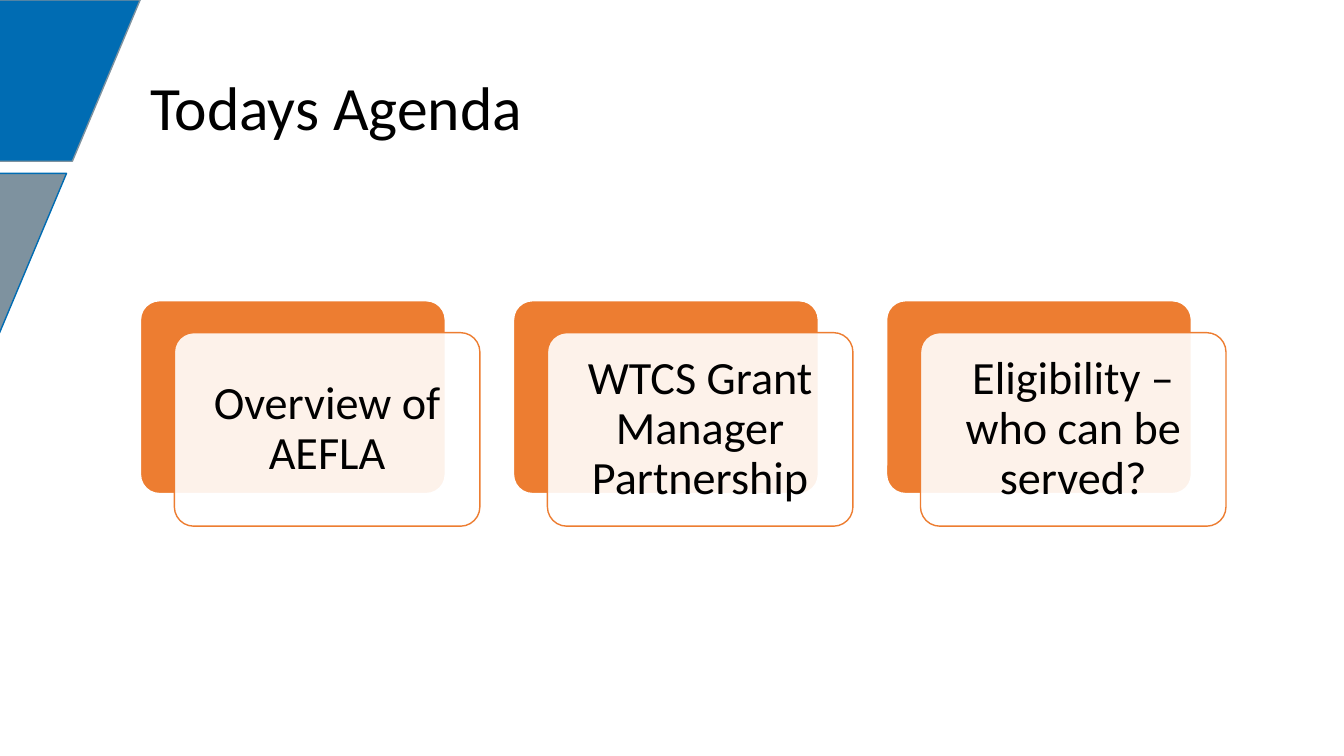
import pptx
import pptx.util
import pptx.dml.color
import pptx.enum.shapes
import pptx.enum.text
import pptx.oxml.ns
import lxml.etree

TITLE = "Todays Agenda"
AGENDA = [
    "Overview of AEFLA",
    "WTCS Grant Manager Partnership",
    "Eligibility – who can be served?",
]
THEME = {
    "font": "Calibri", "title": 44, "card": 33,
    "text": "000000", "white": "FFFFFF", "accent": "ED7D31",
    "blue": "006CB3", "gray": "7E929F",
}
BANDS = [
    (-1.97, 0, "blue", "gray"),
    (-2.7, 1.72, "gray", "blue"),
]
BAND_SIZE = (3.36, 1.6)
CARD_SIZE = (3.03, 1.92)
CARD_LEFT, CARD_TOP, CARD_STEP = 1.39, 2.98, 3.7
OFFSET_X, OFFSET_Y = 0.34, 0.32
CARD_INSET = 0.2

Inches = pptx.util.Inches
Pt = pptx.util.Pt
SHAPE = pptx.enum.shapes.MSO_SHAPE
ALIGN = pptx.enum.text.PP_ALIGN


def color(name):
    return pptx.dml.color.RGBColor.from_string(THEME[name])


def add_box(slide, kind, left, top, size, fill, line, width):
    sp = slide.shapes.add_shape(kind, Inches(left), Inches(top), *map(Inches, size))
    sp.shadow.inherit = False
    sp.fill.solid()
    sp.fill.fore_color.rgb = color(fill)
    sp.line.color.rgb = color(line)
    sp.line.width = Pt(width)
    if kind == SHAPE.ROUNDED_RECTANGLE:
        sp.adjustments[0] = 0.1
    return sp


def set_opacity(sp, percent):
    clr = sp.fill._xPr.find(".//" + pptx.oxml.ns.qn("a:srgbClr"))
    alpha = lxml.etree.SubElement(clr, pptx.oxml.ns.qn("a:alpha"))
    alpha.set("val", str(percent * 1000))


def write(sp, text, size, align):
    tf = sp.text_frame
    tf.word_wrap = True
    tf.vertical_anchor = pptx.enum.text.MSO_ANCHOR.MIDDLE
    p = tf.paragraphs[0]
    p.text = text
    p.alignment = align
    p.line_spacing = 0.9
    p.font.name = THEME["font"]
    p.font.size = Pt(THEME[size])
    p.font.color.rgb = color("text")
    return tf


def main():
    prs = pptx.Presentation()
    prs.slide_width, prs.slide_height = Inches(13.33), Inches(7.5)
    s = prs.slides.add_slide(prs.slide_layouts[6])

    for left, top, fill, line in BANDS:
        add_box(s, SHAPE.FLOWCHART_DATA, left, top, BAND_SIZE, fill, line, 1)

    title = s.shapes.add_textbox(Inches(1.39), Inches(0.61), Inches(9.22), Inches(0.98))
    write(title, TITLE, "title", ALIGN.LEFT)

    for i, text in enumerate(AGENDA):
        left = CARD_LEFT + i * CARD_STEP
        add_box(s, SHAPE.ROUNDED_RECTANGLE, left, CARD_TOP, CARD_SIZE,
                "accent", "white", 1.5)
        card = add_box(s, SHAPE.ROUNDED_RECTANGLE, left + OFFSET_X, CARD_TOP + OFFSET_Y,
                       CARD_SIZE, "white", "accent", 1)
        set_opacity(card, 90)
        tf = write(card, text, "card", ALIGN.CENTER)
        tf.margin_left = tf.margin_right = Inches(CARD_INSET)
        tf.margin_top = tf.margin_bottom = Inches(CARD_INSET)

    prs.save("out.pptx")


if __name__ == "__main__":
    main()
